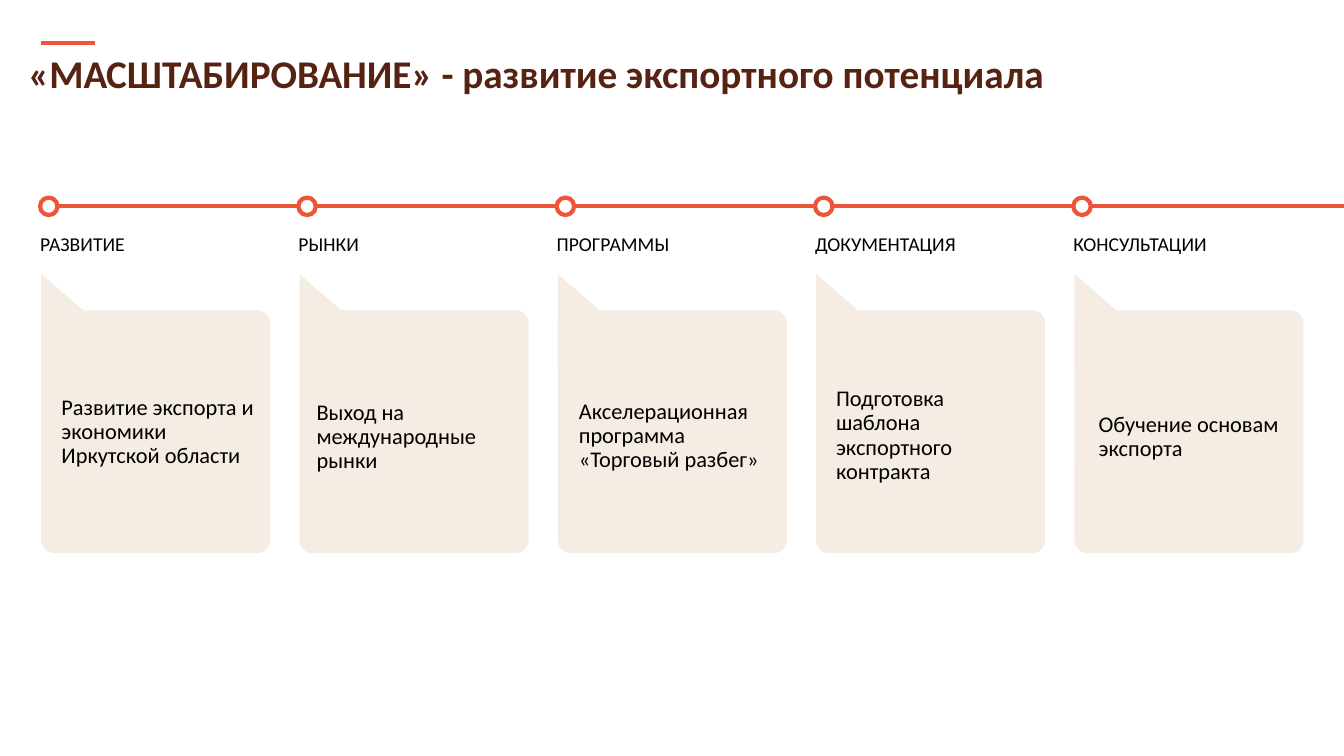
from dataclasses import dataclass

from lxml.etree import SubElement
from pptx import Presentation
from pptx.dml.color import RGBColor
from pptx.enum.shapes import MSO_CONNECTOR as Connector, MSO_SHAPE as Shape
from pptx.enum.text import MSO_ANCHOR as Anchor, PP_ALIGN as Align
from pptx.oxml.ns import qn
from pptx.util import Cm, Pt

TITLE = "«МАСШТАБИРОВАНИЕ» - развитие экспортного потенциала"

# Heading, card paragraphs, text inset from the card edge, text width, text middle (cm)
STEPS = [
    ("РАЗВИТИЕ", ["Развитие экспорта и экономики", "Иркутской области"], 0.26, 5.51, 10.9),
    ("РЫНКИ", ["Выход на международные рынки"], 0.18, 5.51, 11.02),
    ("ПРОГРАММЫ", ["Акселерационная программа «Торговый разбег»"], 0.28, 5.2, 11.0),
    ("ДОКУМЕНТАЦИЯ", ["Подготовка шаблона экспортного контракта"], 0.25, 5.2, 10.98),
    ("КОНСУЛЬТАЦИИ", ["Обучение основам экспорта"], 0.36, 5.16, 11.01),
]


@dataclass(frozen=True)
class Theme:
    accent: RGBColor = RGBColor(0xED, 0x55, 0x39)
    title: RGBColor = RGBColor(0x56, 0x22, 0x12)
    card: RGBColor = RGBColor(0xF5, 0xEC, 0xE3)
    text: RGBColor = RGBColor(0, 0, 0)
    white: RGBColor = RGBColor(0xFF, 0xFF, 0xFF)
    font: str = "Calibri"
    title_size: int = 28
    heading_size: int = 14
    body_size: int = 16
    stroke: int = 3


THEME = Theme()
SLIDE_W, SLIDE_H = 33.87, 19.05
MARGIN, PITCH = 1.04, 6.51
CARD_W, CARD_H, CARD_TOP = 5.77, 6.12, 7.82
POINTER_W, POINTER_H, POINTER_TOP = 2.67, 2.31, 6.91
AXIS_Y, MARKER = 5.2, 0.44
HEADING_TOP, HEADING_W, HEADING_H = 5.72, 5.2, 0.85
BODY_H = 2.16


def write(frame, paragraphs, size, color, bold=False, spacing=1.0):
    frame.word_wrap = True
    for index, words in enumerate(paragraphs):
        paragraph = frame.paragraphs[0] if index == 0 else frame.add_paragraph()
        paragraph.alignment = Align.LEFT
        paragraph.line_spacing = spacing
        run = paragraph.add_run()
        run.text = words
        font = run.font
        font.name, font.size, font.bold = THEME.font, Pt(size), bold
        font.color.rgb = color


def add_rule(shapes, x1, x2, y):
    rule = shapes.add_connector(Connector.STRAIGHT, Cm(x1), Cm(y), Cm(x2), Cm(y))
    rule.line.color.rgb = THEME.accent
    rule.line.width = Pt(THEME.stroke)
    SubElement(rule._element.spPr, qn("a:effectLst"))


def add_filled(shapes, kind, box, fill):
    part = shapes.add_shape(kind, *map(Cm, box))
    part.shadow.inherit = False
    part.fill.solid()
    part.fill.fore_color.rgb = fill
    part.line.fill.background()
    return part


def add_card(shapes, left):
    """Draw a rounded card with a pointer rising from its left edge."""
    parts = shapes.add_group_shape().shapes
    add_filled(parts, Shape.RIGHT_TRIANGLE, (left, POINTER_TOP, POINTER_W, POINTER_H), THEME.card)
    panel = add_filled(parts, Shape.ROUNDED_RECTANGLE, (left, CARD_TOP, CARD_W, CARD_H), THEME.card)
    panel.adjustments[0] = 0.057


def add_step(shapes, left, heading, body, inset, body_w, middle):
    marker = add_filled(shapes, Shape.OVAL, (left - 0.03, AXIS_Y - MARKER / 2, MARKER, MARKER), THEME.white)
    marker.line.color.rgb = THEME.accent
    marker.line.width = Pt(THEME.stroke)

    label = shapes.add_textbox(Cm(left - 0.28), Cm(HEADING_TOP), Cm(HEADING_W), Cm(HEADING_H))
    write(label.text_frame, [heading], THEME.heading_size, THEME.text)

    add_card(shapes, left)
    text = shapes.add_textbox(Cm(left + inset), Cm(middle - BODY_H / 2), Cm(body_w), Cm(BODY_H))
    text.text_frame.vertical_anchor = Anchor.MIDDLE
    write(text.text_frame, body, THEME.body_size, THEME.text, spacing=0.9)


def main():
    deck = Presentation()
    deck.slide_width, deck.slide_height = Cm(SLIDE_W), Cm(SLIDE_H)
    slide = deck.slides.add_slide(deck.slide_layouts[5])
    shapes = slide.shapes

    title = shapes.title
    title.left, title.top, title.width, title.height = Cm(0.46), Cm(1.27), Cm(28.5), Cm(1.27)
    title.text_frame.vertical_anchor = Anchor.MIDDLE
    write(title.text_frame, [TITLE], THEME.title_size, THEME.title, bold=True, spacing=0.9)

    add_rule(shapes, MARGIN, 2.39, 1.09)
    add_rule(shapes, 1.3, SLIDE_W, AXIS_Y)
    for index, step in enumerate(STEPS):
        add_step(shapes, MARGIN + index * PITCH, *step)
    deck.save("out.pptx")


if __name__ == "__main__":
    main()
